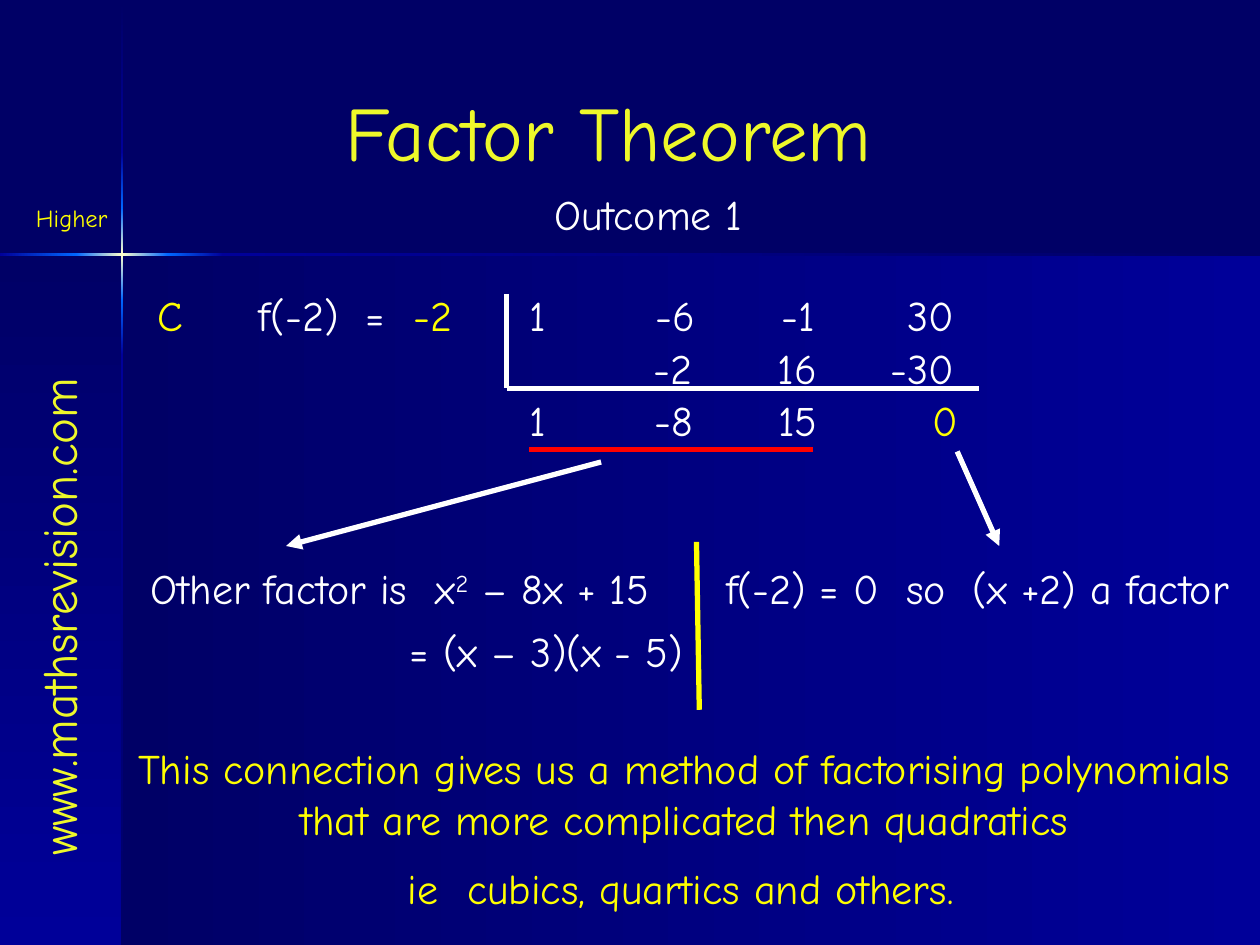
from copy import deepcopy
from itertools import pairwise

from lxml.etree import SubElement
from pptx import Presentation
from pptx.dml.color import RGBColor
from pptx.enum.shapes import MSO_CONNECTOR, MSO_SHAPE
from pptx.enum.text import MSO_ANCHOR, MSO_AUTO_SIZE, PP_ALIGN
from pptx.oxml.ns import qn
from pptx.util import Pt

NAVY = RGBColor(0x00, 0x00, 0x66)
BLUE = RGBColor(0x00, 0x00, 0x99)
BRIGHT = RGBColor(0x00, 0x66, 0xFF)
CREAM = RGBColor(0xFF, 0xFF, 0xCC)
LIME = RGBColor(0xEE, 0xF8, 0x2A)
YELLOW = RGBColor(0xFF, 0xFF, 0x00)
WHITE = RGBColor(0xFF, 0xFF, 0xFF)
RED = RGBColor(0xFF, 0x00, 0x00)

HORIZONTAL, VERTICAL = 0, 270


class SlideBuilder:
    font = "Comic Neue"
    size = 24
    line_width = 3

    def __init__(self, slide):
        self.slide = slide

    def background(self, color):
        fill = self.slide.background.fill
        fill.solid()
        fill.fore_color.rgb = color

    def gradient(self, left, top, width, height, colors, angle):
        shape = self.slide.shapes.add_shape(
            MSO_SHAPE.RECTANGLE, Pt(left), Pt(top), Pt(width), Pt(height))
        shape.shadow.inherit = False
        shape.line.fill.background()
        shape.fill.gradient()
        shape.fill.gradient_angle = angle
        stop_list = shape._element.spPr.find(".//" + qn("a:gsLst"))
        for _ in colors[2:]:
            stop_list.insert(1, deepcopy(stop_list[0]))
        for index, (stop, color) in enumerate(zip(shape.fill.gradient_stops, colors)):
            stop.color.rgb = color
            stop.position = index / (len(colors) - 1)

    def fill_text(self, shape, runs, size, align, tabs=()):
        frame = shape.text_frame
        frame.word_wrap = True
        frame.auto_size = MSO_AUTO_SIZE.NONE
        frame.vertical_anchor = MSO_ANCHOR.TOP
        paragraph = frame.paragraphs[0]
        paragraph.alignment = align
        if tabs:
            tab_list = SubElement(paragraph._p.get_or_add_pPr(), qn("a:tabLst"))
            for position in tabs:
                SubElement(tab_list, qn("a:tab"), pos=str(Pt(position)), algn="l")
        for text, color, *raised in runs:
            run = paragraph.add_run()
            run.text = text
            run.font.name = self.font
            run.font.size = Pt(size)
            run.font.color.rgb = color
            if raised:
                run.font._element.set("baseline", "30000")

    def title(self, left, top, width, height, text, color, size):
        shape = self.slide.shapes.title
        shape.left, shape.top = Pt(left), Pt(top)
        shape.width, shape.height = Pt(width), Pt(height)
        self.fill_text(shape, [(text, color)], size, PP_ALIGN.CENTER)

    def text(self, left, top, width, *runs, height=36, size=None,
             align=PP_ALIGN.CENTER, rotation=0):
        shape = self.slide.shapes.add_textbox(Pt(left), Pt(top), Pt(width), Pt(height))
        shape.rotation = rotation
        self.fill_text(shape, runs, size or self.size, align)

    def tabbed(self, left, top, width, inset, tabs, *runs):
        shape = self.slide.shapes.add_textbox(Pt(left), Pt(top), Pt(width), Pt(36))
        shape.text_frame.margin_left = Pt(inset)
        self.fill_text(shape, runs, self.size, PP_ALIGN.LEFT, tabs)

    def line(self, x1, y1, x2, y2, color, arrow=False):
        connector = self.slide.shapes.add_connector(
            MSO_CONNECTOR.STRAIGHT, Pt(x1), Pt(y1), Pt(x2), Pt(y2))
        connector.line.color.rgb = color
        connector.line.width = Pt(self.line_width)
        properties = connector._element.spPr
        if arrow:
            SubElement(properties.find(qn("a:ln")), qn("a:tailEnd"), type="triangle")
        SubElement(properties, qn("a:effectLst"))


def draw_backdrop(builder):
    builder.background(NAVY)
    builder.gradient(70, 145.5, 650, 394.5, [NAVY, BLUE], HORIZONTAL)
    builder.gradient(0, 145.5, 70, 394.5, [NAVY, BLUE], VERTICAL)

    # Light beams that cross at the panel corner
    beam = [[NAVY, BLUE], [BLUE, BRIGHT], [BRIGHT, CREAM, BRIGHT],
            [BRIGHT, BLUE], [BLUE, NAVY]]
    for (top, bottom), colors in zip(pairwise([0.7, 87, 119, 171.5, 203, 540]), beam):
        builder.gradient(69.2, top, 1.4, bottom - top, colors, VERTICAL)
    for (left, right), colors in zip(pairwise([0, 43.5, 96, 127.5, 720]), beam[1:]):
        builder.gradient(left, 144.8, right - left, 1.4, colors, HORIZONTAL)


def draw_division(builder):
    first_row, second_row, result_row = 162, 192, 222
    builder.text(73.5, first_row, 48, ("C", YELLOW))
    builder.tabbed(126, first_row, 157, 22, [61, 88.5],
                   ("f(-2)\t=\t", WHITE), ("-2", YELLOW))
    builder.line(289.5, 168, 289.5, 222, WHITE)
    builder.line(289.5, 222, 559.5, 222, WHITE)
    builder.tabbed(289.5, first_row, 270, 13, [72, 144, 216],
                   ("1\t-6\t-1\t30", WHITE))
    for left, top, width, text, color in [
        (295.5, result_row, 24, "1", WHITE),
        (363.6, second_row, 42, "-2", WHITE),
        (358, result_row, 54, "-8", WHITE),
        (428.5, second_row, 54, "16", WHITE),
        (426, result_row, 60, "15", WHITE),
        (491, second_row, 72, "-30", WHITE),
        (510, result_row, 60, "0", YELLOW),
    ]:
        builder.text(left, top, width, (text, color))
    builder.line(302.4, 257, 464.4, 257, RED)


def main():
    presentation = Presentation()
    presentation.slide_width, presentation.slide_height = Pt(720), Pt(540)
    builder = SlideBuilder(presentation.slides.add_slide(presentation.slide_layouts[5]))
    draw_backdrop(builder)

    # Headings and side label
    builder.title(42, 44.6, 612, 60, "Factor Theorem", LIME, 44)
    builder.text(-124.6, 317.5, 316, ("www.mathsrevision.com", LIME),
                 height=41, size=28, align=PP_ALIGN.LEFT, rotation=270)
    builder.text(11.5, 112.3, 59, ("Higher", YELLOW), height=24.5, size=14)
    builder.text(304.5, 104.4, 132, ("Outcome 1", WHITE))

    draw_division(builder)

    # Conclusions drawn from the remainder and the quotient
    builder.line(547, 258, 571, 312, WHITE, arrow=True)
    builder.tabbed(396, 318, 330, 19, [103, 141],
                   ("f(-2) = 0\tso\t(x +2) a factor", WHITE))
    builder.line(343.5, 264, 163.5, 312, WHITE, arrow=True)
    builder.tabbed(61, 318, 338, 25, [163],
                   ("Other factor is\tx", WHITE), ("2", WHITE, True),
                   (" – 8x + 15", WHITE))
    builder.text(199.5, 354, 198, ("= (x – 3)(x - 5)", WHITE), align=PP_ALIGN.RIGHT)
    builder.line(398, 309.6, 399.6, 405.6, YELLOW)

    # Closing remark
    builder.text(70, 421, 642, (
        "This connection gives us a method of factorising polynomials "
        "that are more complicated then quadratics", YELLOW), height=65)
    builder.tabbed(70, 489.6, 642, 163, [34],
                   ("ie\tcubics, quartics and others.", YELLOW))

    presentation.save("out.pptx")


if __name__ == "__main__":
    main()
